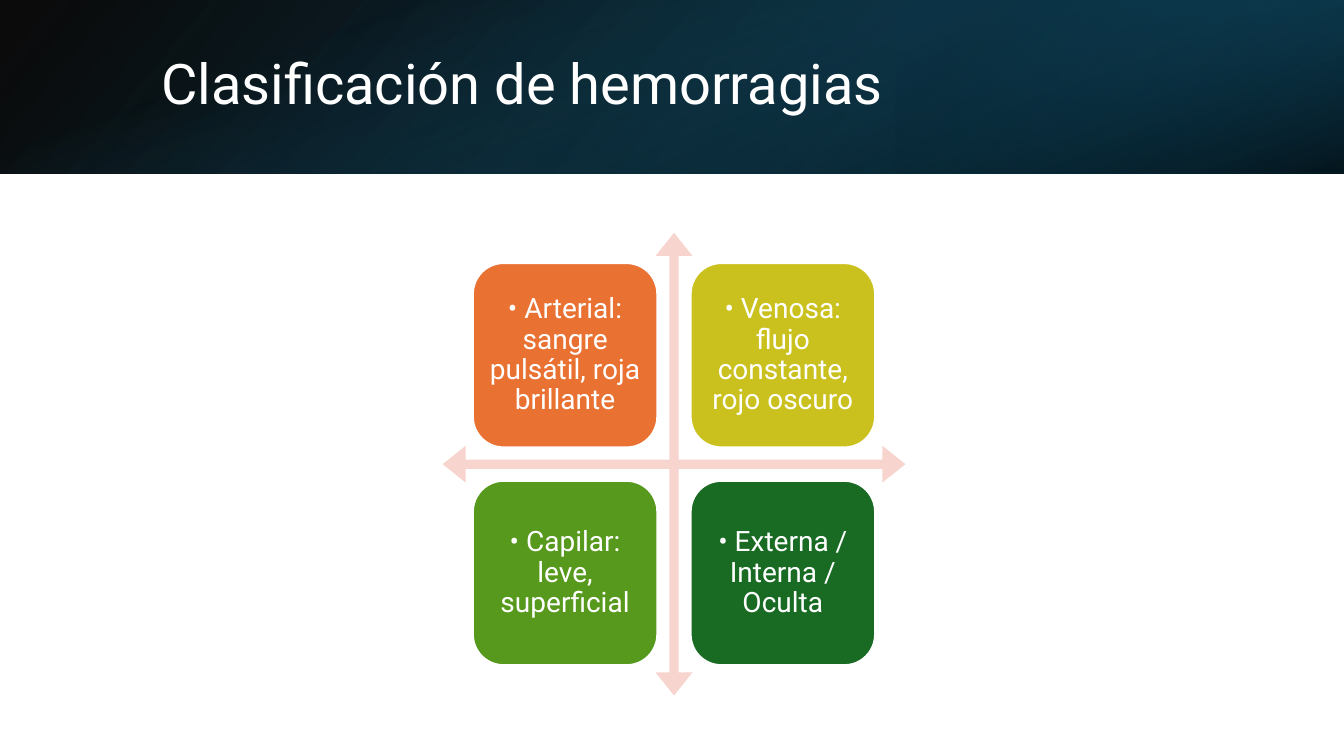
from dataclasses import dataclass

from lxml.etree import SubElement
from pptx import Presentation
from pptx.dml.color import RGBColor
from pptx.enum.shapes import MSO_SHAPE
from pptx.enum.text import MSO_ANCHOR, MSO_AUTO_SIZE, PP_ALIGN
from pptx.oxml.ns import qn
from pptx.util import Inches, Pt


@dataclass(frozen=True)
class Theme:
    font: str = "Roboto"
    title_size: int = 40
    tile_size: int = 20
    white: str = "FFFFFF"
    black: str = "000000"
    arrows: str = "F7D5CE"
    navy: str = "104862"
    deep: str = "0B3041"
    teal: str = "156082"
    orange: str = "E97132"
    yellow: str = "CBC11E"
    green: str = "56991D"
    forest: str = "196B24"


THEME = Theme()
SLIDE_W, SLIDE_H = 13.33, 7.5
BANNER_H = 1.72

TILES = [
    ("• Arterial: sangre pulsátil, roja brillante", THEME.orange),
    ("• Venosa: flujo constante, rojo oscuro", THEME.yellow),
    ("• Capilar: leve, superficial", THEME.green),
    ("• Externa / Interna / Oculta", THEME.forest),
]


def add_plain_shape(slide, kind, x, y, w, h):
    sp = slide.shapes.add_shape(kind, Inches(x), Inches(y), Inches(w), Inches(h))
    sp.shadow.inherit = False
    sp.line.fill.background()
    return sp


def set_fill(sp, color):
    sp.fill.solid()
    sp.fill.fore_color.rgb = RGBColor.from_string(color)


def set_gradient(sp, stops, angle):
    """Fill with (position %, colour, opacity %) stops; angle is clockwise degrees."""
    sp.fill.gradient()
    grad = sp._element.spPr.find(qn("a:gradFill"))
    for child in list(grad):
        grad.remove(child)
    gs_list = SubElement(grad, qn("a:gsLst"))
    for pos, color, opacity in stops:
        gs = SubElement(gs_list, qn("a:gs"), pos=str(pos * 1000))
        clr = SubElement(gs, qn("a:srgbClr"), val=color)
        if opacity < 100:
            SubElement(clr, qn("a:alpha"), val=str(opacity * 1000))
    SubElement(grad, qn("a:lin"), ang=str(angle * 60000), scaled="0")


def format_text(tf, text, size, align):
    tf.text = text
    tf.word_wrap = True
    tf.auto_size = MSO_AUTO_SIZE.NONE
    tf.vertical_anchor = MSO_ANCHOR.MIDDLE
    p = tf.paragraphs[0]
    p.alignment = align
    p.line_spacing = 0.9
    font = p.runs[0].font
    font.name, font.size = THEME.font, Pt(size)
    font.color.rgb = RGBColor.from_string(THEME.white)


def add_banner(slide, x, y, w, h):
    """Three overlaid gradients; the last is a tall strip turned on its side."""
    third = w / 3
    layers = [
        ((x, y, w, h), 0, True, 140,
         [(0, THEME.black, 96), (100, THEME.navy, 100)]),
        ((x + w - third, y, third, h), 180, True, 320,
         [(19, THEME.deep, 68), (100, THEME.teal, 79)]),
        ((x + (w - h) / 2, y + (h - w) / 2, h, w), 90, False, 340,
         [(23, THEME.teal, 0), (99, THEME.black, 74)]),
    ]
    for box, rotation, flipped, angle, stops in layers:
        sp = add_plain_shape(slide, MSO_SHAPE.RECTANGLE, *box)
        sp.rotation = rotation
        if flipped:
            sp._element.spPr.xfrm.set("flipH", "1")
        set_gradient(sp, stops, angle)


def add_title(slide, text, x, y, w, h):
    title = slide.shapes.title
    title.left, title.top = Inches(x), Inches(y)
    title.width, title.height = Inches(w), Inches(h)
    format_text(title.text_frame, text, THEME.title_size, PP_ALIGN.LEFT)
    slide.shapes._spTree.append(title._element)  # bring in front of the banner


def add_tile(slide, text, color, x, y, side):
    sp = add_plain_shape(slide, MSO_SHAPE.ROUNDED_RECTANGLE, x, y, side, side)
    set_fill(sp, color)
    sp.line.color.rgb = RGBColor.from_string(THEME.white)
    sp.line.width = Pt(1.5)
    tf = sp.text_frame
    # The rounded corners already inset the text area by 0.09
    tf.margin_left = tf.margin_right = Inches(0.08)
    tf.margin_top = tf.margin_bottom = Inches(0.08)
    format_text(tf, text, THEME.tile_size, PP_ALIGN.CENTER)


def add_matrix(slide, tiles, x, y, side):
    """Four-way arrow with one tile in each quadrant of a square box."""
    cross = add_plain_shape(slide, MSO_SHAPE.QUAD_ARROW, x, y, side, side)
    for i, value in enumerate((0.02, 0.04, 0.05)):
        cross.adjustments[i] = value
    set_fill(cross, THEME.arrows)

    tile, margin = 1.83, 0.3
    step = side - 2 * margin - tile
    for i, (text, color) in enumerate(tiles):
        row, col = divmod(i, 2)
        add_tile(slide, text, color,
                 x + margin + col * step, y + margin + row * step, tile)


def main():
    prs = Presentation()
    prs.slide_width, prs.slide_height = Inches(SLIDE_W), Inches(SLIDE_H)
    s = prs.slides.add_slide(prs.slide_layouts[5])
    add_banner(s, 0, 0, SLIDE_W, BANNER_H)
    add_title(s, "Clasificación de hemorragias", 1.5, 0.38, 10.98, 0.96)
    add_matrix(s, TILES, 4.39, 2.31, 4.59)
    prs.save("out.pptx")


if __name__ == "__main__":
    main()
